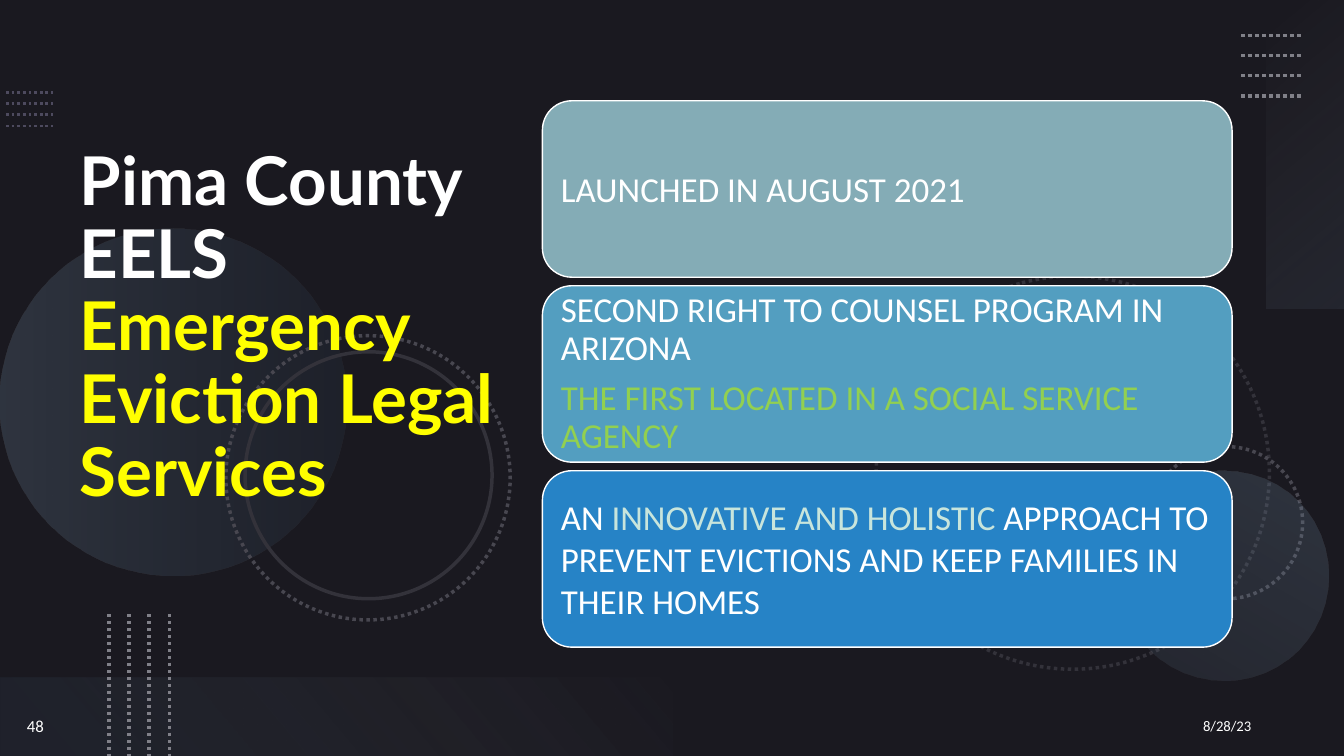
import pptx
import pptx.util
import pptx.dml.color
import pptx.enum.dml
import pptx.enum.shapes
import pptx.enum.text
import pptx.oxml.ns
import pptx.oxml.xmlchemy

Inches = pptx.util.Inches
Pt = pptx.util.Pt
RGBColor = pptx.dml.color.RGBColor
MSO_SHAPE = pptx.enum.shapes.MSO_SHAPE
PP_ALIGN = pptx.enum.text.PP_ALIGN
MSO_ANCHOR = pptx.enum.text.MSO_ANCHOR
OxmlElement = pptx.oxml.xmlchemy.OxmlElement
qn = pptx.oxml.ns.qn

NIGHT = RGBColor(0x1A, 0x19, 0x20)
WHITE = RGBColor(0xFF, 0xFF, 0xFF)
YELLOW = RGBColor(0xFF, 0xFF, 0x00)
LIME = RGBColor(0x92, 0xD0, 0x50)
MINT = RGBColor(0xC8, 0xE5, 0xDC)
SAGE = RGBColor(0x84, 0xAC, 0xB6)
TEAL = RGBColor(0x53, 0x9E, 0xC0)
BLUE = RGBColor(0x26, 0x83, 0xC6)
MIST = RGBColor(0x86, 0xA6, 0xC1)
STEEL = RGBColor(0x4A, 0x70, 0x90)
PALE = RGBColor(0xE2, 0xE9, 0xF0)
LILAC = RGBColor(0x4D, 0x4A, 0x5E)
SILVER = RGBColor(0x80, 0x80, 0x88)
GREY = RGBColor(0x48, 0x47, 0x50)
DIM = RGBColor(0x33, 0x32, 0x3A)


def set_line(line, color, width, dotted=True):
    line.color.rgb = color
    line.width = Pt(width)
    if dotted:
        line.dash_style = pptx.enum.dml.MSO_LINE.ROUND_DOT


def add_dotted_lines(s, box, count, color, width, vertical=False):
    left, top, w, h = box
    for i in range(count):
        t = i / (count - 1)
        if vertical:
            x1 = x2 = left + w * t
            y1, y2 = top, top + h
        else:
            x1, x2 = left, left + w
            y1 = y2 = top + h * t
        c = s.shapes.add_connector(
            pptx.enum.shapes.MSO_CONNECTOR.STRAIGHT,
            Inches(x1), Inches(y1), Inches(x2), Inches(y2))
        set_line(c.line, color, width)
        c._element.spPr.append(OxmlElement("a:effectLst"))


def add_plain_shape(s, kind, box, rotation=0):
    sp = s.shapes.add_shape(kind, *map(Inches, box))
    sp.shadow.inherit = False
    sp.rotation = rotation
    return sp


def add_ring(s, box, color, rotation, dotted=True):
    sp = add_plain_shape(s, MSO_SHAPE.OVAL, box, rotation)
    sp.fill.background()
    set_line(sp.line, color, 2.5, dotted)


def add_glow(s, kind, box, rotation, angle, stops):
    sp = add_plain_shape(s, kind, box, rotation)
    sp.line.fill.background()
    sp.fill.gradient()
    sp.fill.gradient_angle = 360 - angle
    for stop, (position, color, opacity) in zip(sp.fill.gradient_stops, stops):
        stop.position = position
        stop.color.rgb = color
    colors = sp._element.spPr.iter(qn("a:srgbClr"))
    for clr, (position, color, opacity) in zip(colors, stops):
        alpha = OxmlElement("a:alpha")
        alpha.set("val", str(opacity * 1000))
        clr.append(alpha)


def add_backdrop(s, box):
    left, top, w, h = box
    right, bottom = left + w, top + h
    s.background.fill.solid()
    s.background.fill.fore_color.rgb = NIGHT
    add_dotted_lines(s, (left + 0.06, top + 0.92, 0.47, 0.33), 4, LILAC, 2)
    add_ring(s, (right - 4.64, top + 2.74, 3.9, 3.9), DIM, 75)
    add_ring(s, (right - 1.92, top + 4.43, 1.51, 1.51), GREY, 270)
    add_glow(s, MSO_SHAPE.OVAL, (left, top + 2.27, 3.44, 3.44), 270, 90,
             [(0, MIST, 20), (1, STEEL, 10)])
    add_glow(s, MSO_SHAPE.OVAL, (right - 2.23, top + 4.67, 2.08, 2.08), 210, 90,
             [(0, MIST, 10), (1, MIST, 20)])
    add_ring(s, (left + 2.24, top + 3.33, 2.82, 2.82), GREY, 75)
    add_ring(s, (left + 2.43, top + 3.49, 2.45, 2.45), DIM, 75, False)
    add_glow(s, MSO_SHAPE.RECTANGLE, (right - 1.91, top + 1.14, 3.06, 0.78), 270, 140,
             [(0, PALE, 0), (1, MIST, 10)])
    add_dotted_lines(s, (right - 1.02, top + 0.35, 0.6, 0.6), 4, SILVER, 2.5)
    add_glow(s, MSO_SHAPE.RECTANGLE, (left, bottom - 0.78, w / 2, 0.78), 180, 140,
             [(0.1, STEEL, 10), (1, PALE, 0)])
    add_dotted_lines(s, (left + 1.08, bottom - 1.41, 0.6, 1.41), 4, SILVER, 2.5, True)


def add_runs(p, runs):
    for text, color in runs:
        r = p.add_run()
        r.text = text
        r.font.color.rgb = color


def add_title(s, box):
    title = s.shapes.title
    s.shapes._spTree.append(title._element)
    title.left, title.top, title.width, title.height = map(Inches, box)
    tf = title.text_frame
    tf.word_wrap = True
    tf.auto_size = pptx.enum.text.MSO_AUTO_SIZE.NONE
    tf.vertical_anchor = MSO_ANCHOR.MIDDLE
    tf.margin_bottom = Inches(0.77)
    p = tf.paragraphs[0]
    p.alignment = PP_ALIGN.LEFT
    p.line_spacing = 0.9
    p.font.name = "Lato"
    p.font.size = Pt(48)
    p.font.bold = True
    add_runs(p, [("Pima County EELS", WHITE)])
    p.add_line_break()
    add_runs(p, [("Emergency Eviction Legal Services", YELLOW)])


def add_cards(s, box, cards):
    left, top, w, h = box
    gap = 0.085
    card_h = (h - gap * (len(cards) - 1)) / len(cards)
    for i, (color, spacing, paragraphs) in enumerate(cards):
        sp = add_plain_shape(s, MSO_SHAPE.ROUNDED_RECTANGLE,
                             (left, top + i * (card_h + gap), w, card_h))
        sp.fill.solid()
        sp.fill.fore_color.rgb = color
        set_line(sp.line, WHITE, 1, False)
        tf = sp.text_frame
        tf.word_wrap = True
        tf.vertical_anchor = MSO_ANCHOR.MIDDLE
        tf.margin_left = tf.margin_right = Inches(0.1)
        tf.margin_top = tf.margin_bottom = Inches(0.1)
        for j, runs in enumerate(paragraphs):
            p = tf.add_paragraph() if j else tf.paragraphs[0]
            p.alignment = PP_ALIGN.LEFT
            p.line_spacing = spacing
            p.space_before = Pt(8.75 if j else 0)
            p.font.name = "Calibri"
            p.font.size = Pt(25)
            add_runs(p, runs)


def add_footer_text(s, box, text, size, alignment):
    tf = s.shapes.add_textbox(*map(Inches, box)).text_frame
    tf.word_wrap = True
    tf.vertical_anchor = MSO_ANCHOR.MIDDLE
    p = tf.paragraphs[0]
    p.alignment = alignment
    p.font.name = "Calibri"
    p.font.size = Pt(size)
    add_runs(p, [(text, WHITE)])


def main():
    prs = pptx.Presentation()
    prs.slide_width, prs.slide_height = Inches(13.33), Inches(7.5)
    s = prs.slides.add_slide(prs.slide_layouts[5])
    add_backdrop(s, (0, 0, 13.33, 7.5))
    add_title(s, (0.69, 0.54, 4.59, 6.17))
    add_footer_text(s, (0, 6.9, 0.7, 0.6), "48", 12, PP_ALIGN.CENTER)
    add_footer_text(s, (10.01, 6.9, 2.5, 0.6), "8/28/23", 10.5, PP_ALIGN.RIGHT)
    add_cards(s, (5.38, 1, 6.84, 5.42), [
        (SAGE, 1.0, [[("LAUNCHED IN AUGUST 2021", WHITE)]]),
        (TEAL, 0.9, [
            [("SECOND RIGHT TO COUNSEL PROGRAM IN ARIZONA", WHITE)],
            [("THE FIRST LOCATED IN A SOCIAL SERVICE AGENCY", LIME)]]),
        (BLUE, 1.0, [[
            ("AN ", WHITE), ("INNOVATIVE AND HOLISTIC ", MINT),
            ("APPROACH TO PREVENT EVICTIONS AND KEEP FAMILIES IN THEIR HOMES", WHITE)]]),
    ])
    prs.save("out.pptx")


if __name__ == "__main__":
    main()
